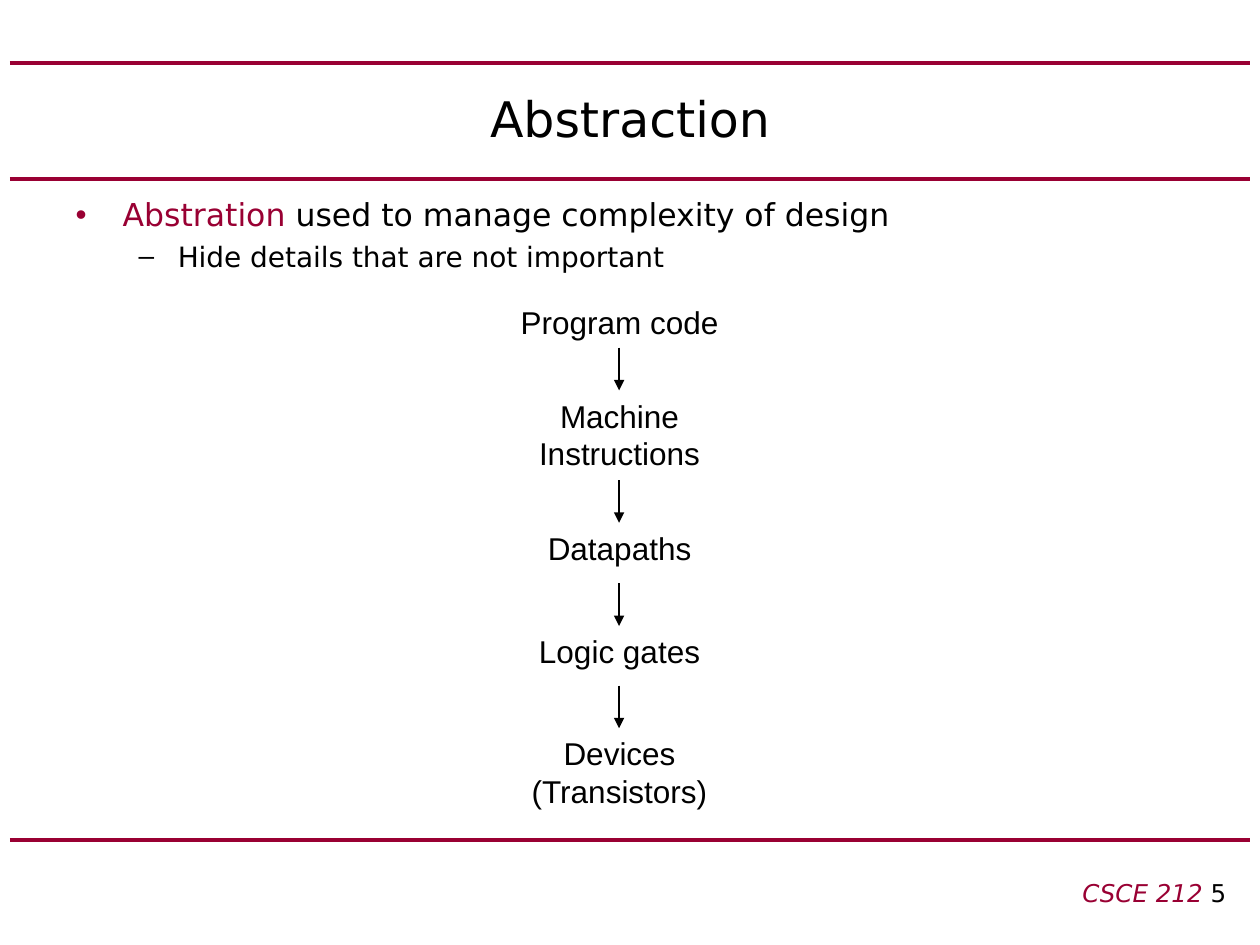
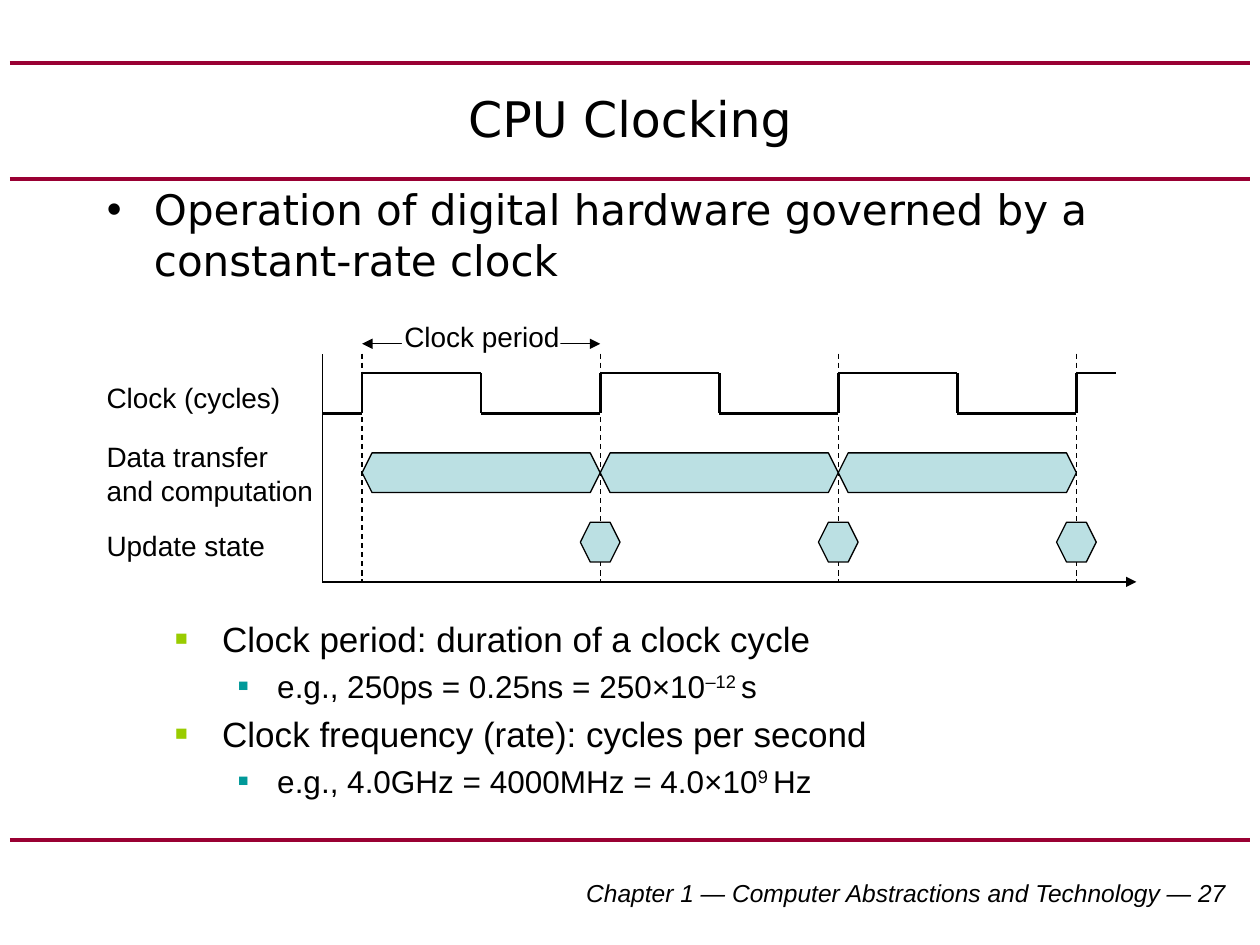
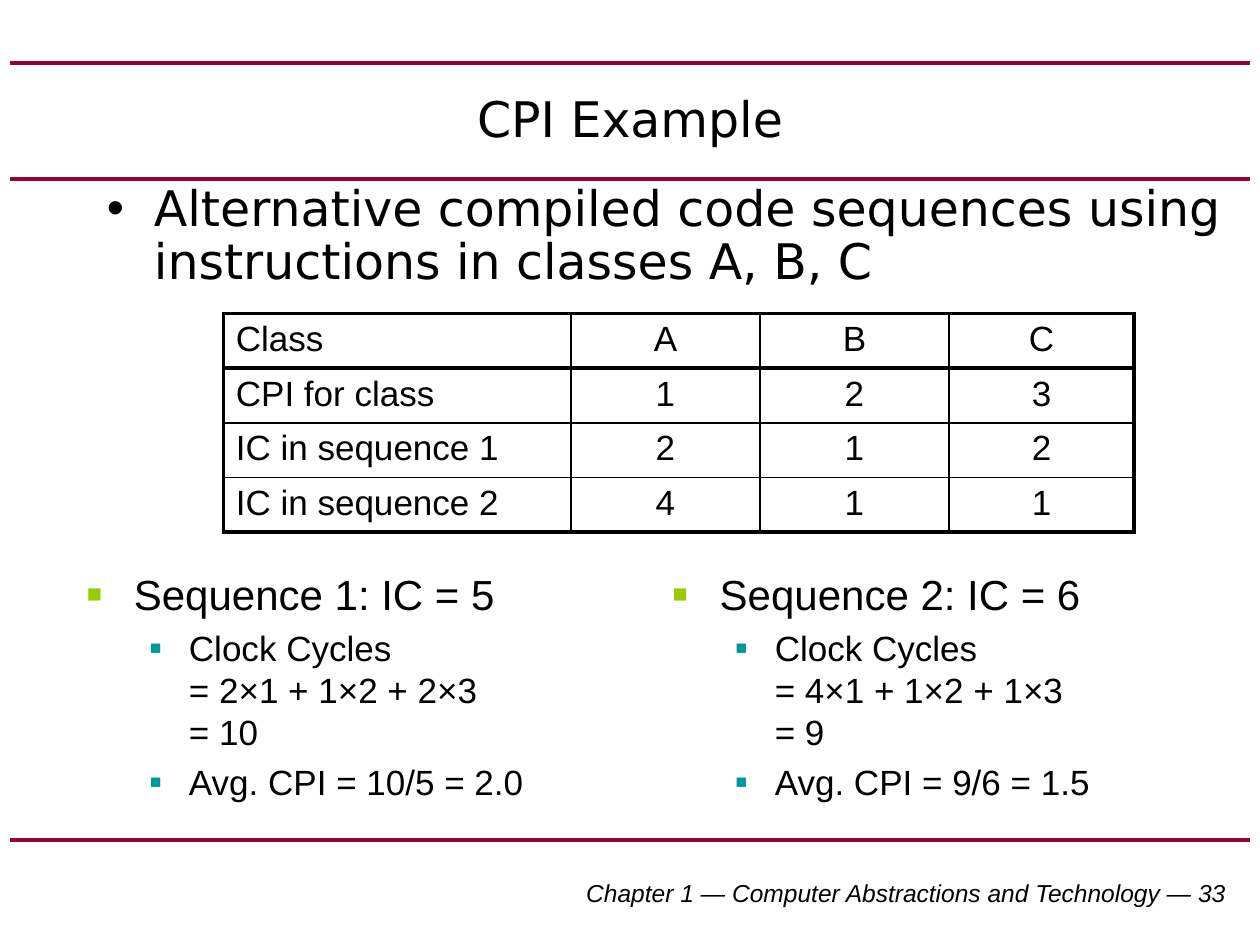
from dataclasses import dataclass

from lxml import etree
from pptx import Presentation
from pptx import util as u
from pptx.dml.color import RGBColor
from pptx.enum import dml, shapes, text
from pptx.oxml.ns import qn

Cm, Pt = u.Cm, u.Pt
LEFT, CENTER, RIGHT = text.PP_ALIGN.LEFT, text.PP_ALIGN.CENTER, text.PP_ALIGN.RIGHT


@dataclass(frozen=True)
class Theme:
    accent: str = "990033"
    ink: str = "000000"
    paper: str = "FFFFFF"
    signal: str = "BBE0E3"
    heading_font: str = "DejaVu Sans"
    text_font: str = "Arial"
    title: int = 28
    large: int = 24
    medium: int = 20
    normal: int = 18
    small: int = 16
    footer: int = 14
    thin: float = 0.75
    cell: float = 1
    wave: float = 1.5
    thick: float = 2.25
    # (character, colour, percent of text size) for each list level
    round_marks: tuple = (("•", None, 100), ("–", None, 100))
    square_marks: tuple = (("■", "99CC00", 60), ("■", "009999", 55))
    indents: tuple = ((0.95, -0.95), (2.06, -0.79))  # margin, first line


THEME = Theme()


def rgb(color):
    return RGBColor.from_string(color)


def add_xml(parent, tag, **attrs):
    return etree.SubElement(parent, qn(tag), {k: str(v) for k, v in attrs.items()})


def write(p, content, size=THEME.normal, font=THEME.text_font, color=THEME.ink,
          italic=False, raised=False):
    """Add text to a paragraph; a newline becomes a line break."""
    for i, line in enumerate(content.split("\n")):
        if i:
            p.add_line_break()
        r = p.add_run()
        r.text = line
        f = r.font
        f.size, f.name, f.italic = Pt(size), font, italic
        f.color.rgb = rgb(color)
        if raised:
            r._r.get_or_add_rPr().set("baseline", "30000")


class Deck:
    def __init__(self, theme):
        self.theme = theme
        self.prs = Presentation()
        self.prs.slide_width, self.prs.slide_height = Cm(25.4), Cm(19.05)
        self.layout = self.prs.slide_layouts[1]
        self.s = None
        self.place(self.layout.placeholders[0], 1.27, 1.27, 22.86, 2.21)

    @staticmethod
    def place(sp, left, top, width, height):
        sp.left, sp.top, sp.width, sp.height = map(Cm, (left, top, width, height))

    def rules(self):
        """Put the three horizontal rules on the layout."""
        for i, y in enumerate((1.27, 3.6, 16.94)):
            rule = self.line((0.2, y), (25.2, y), self.theme.thick, self.theme.accent)
            rule.element.nvCxnSpPr.cNvPr.id = 90 + i
            self.layout.shapes.element.append(rule.element)

    def new_slide(self, title, footer):
        first = self.s is None
        self.s = self.prs.slides.add_slide(self.layout)
        if first:
            self.rules()
        tf = self.s.shapes.title.text_frame
        tf.vertical_anchor = text.MSO_ANCHOR.MIDDLE
        tf.auto_size = text.MSO_AUTO_SIZE.NONE
        p = tf.paragraphs[0]
        p.alignment = CENTER
        write(p, title, size=self.theme.title, font=self.theme.heading_font)
        p = self.text_box(9.53, 17.58, 15.44, 0.84).paragraphs[0]
        p.alignment = RIGHT
        for content, fmt in footer:
            write(p, content, size=self.theme.footer, **fmt)

    def text_box(self, left, top, width, height, wrap=True):
        tf = self.s.shapes.add_textbox(*map(Cm, (left, top, width, height))).text_frame
        tf.word_wrap = wrap
        return tf

    def label(self, content, left, top, width, height=1.02, size=THEME.normal,
              align=LEFT, wrap=True):
        tf = self.text_box(left, top, width, height, wrap)
        for i, item in enumerate(content if isinstance(content, tuple) else (content,)):
            p = tf.add_paragraph() if i else tf.paragraphs[0]
            p.alignment = align
            write(p, item, size=size)

    def body(self, left, top, width, height, items, spacing=None):
        sp = self.s.placeholders[1]
        self.place(sp, left, top, width, height)
        sp.text_frame.auto_size = text.MSO_AUTO_SIZE.NONE
        self.bullets(sp.text_frame, items, self.theme.round_marks,
                     self.theme.heading_font, spacing)

    def bullets(self, tf, items, marks, font, spacing=None):
        """Each item is (level, size, runs); runs are a text or (text, format) pairs."""
        for i, (level, size, runs) in enumerate(items):
            p = tf.add_paragraph() if i else tf.paragraphs[0]
            p.level = level
            p.space_before = Pt(size * 0.23 if i else 0)
            if spacing:
                p.line_spacing = spacing
            margin, first = self.theme.indents[level]
            pPr = p._p.get_or_add_pPr()
            pPr.set("marL", str(Cm(margin)))
            pPr.set("indent", str(Cm(first)))
            char, color, percent = marks[level]
            if color:
                add_xml(add_xml(pPr, "a:buClr"), "a:srgbClr", val=color)
            add_xml(pPr, "a:buSzPct", val=percent * 1000)
            add_xml(pPr, "a:buFont", typeface="Arial")
            add_xml(pPr, "a:buChar", char=char)
            for content, fmt in [(runs, {})] if isinstance(runs, str) else runs:
                write(p, content, size=size, font=font, **fmt)

    def square_list(self, left, top, width, height, items):
        self.bullets(self.text_box(left, top, width, height), items,
                     self.theme.square_marks, self.theme.text_font)

    def line(self, start, end, width=THEME.thin, color=THEME.ink, dashed=False,
             head=False, tail=False):
        cxn = self.s.shapes.add_connector(shapes.MSO_CONNECTOR.STRAIGHT,
                                          *map(Cm, (*start, *end)))
        cxn.line.color.rgb = rgb(color)
        cxn.line.width = Pt(width)
        if dashed:
            cxn.line.dash_style = dml.MSO_LINE.DASH
        ln = cxn.line._get_or_add_ln()
        for wanted, tag in ((head, "a:headEnd"), (tail, "a:tailEnd")):
            if wanted:
                add_xml(ln, tag, type="triangle")
        add_xml(cxn.element.spPr, "a:effectLst")
        return cxn

    def mask(self, left, top, width, height):
        sp = self.s.shapes.add_shape(shapes.MSO_SHAPE.RECTANGLE,
                                     *map(Cm, (left, top, width, height)))
        sp.shadow.inherit = False
        sp.fill.solid()
        sp.fill.fore_color.rgb = rgb(self.theme.paper)
        sp.line.fill.background()

    def hexagon(self, left, top, width, height=0.8, cut=0.2):
        right, mid, bottom = left + width, top + height / 2, top + height
        points = [(left, mid), (left + cut, top), (right - cut, top),
                  (right, mid), (right - cut, bottom), (left + cut, bottom)]
        points = [(Cm(x), Cm(y)) for x, y in points]
        builder = self.s.shapes.build_freeform(*points[0])
        builder.add_line_segments(points[1:], close=True)
        sp = builder.convert_to_shape()
        sp.shadow.inherit = False
        sp.fill.solid()
        sp.fill.fore_color.rgb = rgb(self.theme.signal)
        sp.line.color.rgb = rgb(self.theme.ink)
        sp.line.width = Pt(self.theme.thin)

    def table(self, left, top, widths, row_height, rows):
        n_rows, n_cols = len(rows), len(widths)
        t = self.s.shapes.add_table(n_rows, n_cols, Cm(left), Cm(top), Cm(sum(widths)),
                                    Cm(row_height * n_rows)).table
        t.first_row = t.horz_banding = False
        for col, width in zip(t.columns, widths):
            col.width = Cm(width)
        for i, row in enumerate(rows):
            t.rows[i].height = Cm(row_height)
            for j, content in enumerate(row):
                cell = t.cell(i, j)
                p = cell.text_frame.paragraphs[0]
                p.alignment = CENTER if j else LEFT
                write(p, content, size=self.theme.medium)
                # Thick frame and header rule, thin lines inside
                self.borders(cell, L=j == 0, R=j == n_cols - 1,
                             T=i <= 1, B=i in (0, n_rows - 1))
                cell.fill.background()

    def borders(self, cell, **thick):
        tcPr = cell._tc.get_or_add_tcPr()
        for side, is_thick in thick.items():
            width = self.theme.thick if is_thick else self.theme.cell
            ln = add_xml(tcPr, f"a:ln{side}", w=int(Pt(width)))
            add_xml(add_xml(ln, "a:solidFill"), "a:srgbClr", val=self.theme.ink)


def chapter_footer(number):
    return [(f"Chapter 1 — Computer Abstractions and Technology — {number}",
             {"italic": True})]


def abstraction_slide(d):
    th = d.theme
    accent = {"color": th.accent}
    d.new_slide("Abstraction", [
        ("CSCE 212 ", {"font": th.heading_font, "italic": True, **accent}),
        ("5", {"font": th.heading_font})])
    d.body(1.27, 3.81, 22.66, 2.54, [
        (0, th.normal, [("Abstration", accent),
                        (" used to manage complexity of design", {})]),
        (1, th.small, "Hide details that are not important")])

    # Levels of abstraction, each below an arrow
    levels = [("Program code", 5.99, 1.02), ("Machine Instructions", 7.87, 1.8),
              ("Datapaths", 10.54, 1.02), ("Logic gates", 12.62, 1.02),
              (("Devices", "(Transistors)"), 14.68, 1.8)]
    for i, (name, top, height) in enumerate(levels):
        d.label(name, 9.95, top, 5.08, height, align=CENTER)
        if i:
            d.line((12.48, top - 0.86), (12.48, top), tail=True)


def clocking_slide(d):
    th = d.theme
    d.new_slide("CPU Clocking", chapter_footer(27))
    d.body(1.9, 3.58, 23, 3.4, [
        (0, th.large, "Operation of digital hardware governed by a constant-rate clock")])

    # Timing grid
    axis, first_edge, period, cycles = 6.5, 7.3, 4.8, 3
    top, base, high, low = 7.13, 11.73, 7.52, 8.33
    edges = [first_edge + period * i for i in range(cycles + 1)]
    for x in edges:
        d.line((x, top), (x, base), dashed=True)
    d.line((axis, base), (22.91, base), tail=True)
    d.line((axis, base), (axis, top))

    # Clock wave
    points = [(axis, low)]
    for x in edges[:-1]:
        fall = x + period / 2
        points += [(x, low), (x, high), (fall, high), (fall, low)]
    points += [(edges[-1], low), (edges[-1], high), (22.5, high)]
    for start, end in zip(points, points[1:]):
        d.line(start, end, th.wave)

    # Transfers fill each period, updates sit on its end
    for start, end in zip(edges, edges[1:]):
        d.hexagon(start, 9.13, period)
        d.hexagon(end - 0.4, 10.53, 0.8)

    # Period marker and row labels
    d.line((edges[0], 6.93), (edges[1], 6.93), head=True, tail=True)
    d.mask(8.1, 6.73, 3.2, 0.41)
    d.label("Clock period", 7.9, 6.32, 3.63, 0.94, th.small, CENTER, wrap=False)
    for name, y, width, height in (("Clock (cycles)", 7.54, 4.01, 0.94),
                                   ("Data transfer\nand computation", 8.74, 4.67, 1.63),
                                   ("Update state", 10.54, 3.71, 0.94)):
        d.label(name, 1.9, y, width, height, th.small, wrap=False)

    raised = {"raised": True}
    d.square_list(3.28, 12.32, 21.59, 5.41, [
        (0, th.medium, "Clock period: duration of a clock cycle"),
        (1, th.normal, [("e.g., 250ps = 0.25ns = 250×10", {}), ("–12 ", raised), ("s", {})]),
        (0, th.medium, "Clock frequency (rate): cycles per second"),
        (1, th.normal, [("e.g., 4.0GHz = 4000MHz = 4.0×10", {}), ("9 ", raised),
                        ("Hz", {})])])


def cpi_slide(d):
    th = d.theme
    d.new_slide("CPI Example", chapter_footer(33))
    d.body(1.9, 3.58, 23, 2.77, [
        (0, th.title, "Alternative compiled code sequences using "
                      "instructions in classes A, B, C")], spacing=0.9)
    d.table(4.5, 6.32, (7.01, 3.81, 3.81, 3.73), 1.1, [
        ("Class", "A", "B", "C"),
        ("CPI for class", "1", "2", "3"),
        ("IC in sequence 1", "2", "1", "2"),
        ("IC in sequence 2", "4", "1", "1")])
    for left, heading, cycles, average in (
            (1.5, "Sequence 1: IC = 5", "2×1 + 1×2 + 2×3\n= 10", "10/5 = 2.0"),
            (13.31, "Sequence 2: IC = 6", "4×1 + 1×2 + 1×3\n= 9", "9/6 = 1.5")):
        d.square_list(left, 11.33, 10.8, 5.79, [
            (0, th.large, heading),
            (1, th.medium, f"Clock Cycles\n= {cycles}"),
            (1, th.medium, f"Avg. CPI = {average}")])


def main():
    d = Deck(THEME)
    abstraction_slide(d)
    clocking_slide(d)
    cpi_slide(d)
    d.prs.save("out.pptx")


if __name__ == "__main__":
    main()
